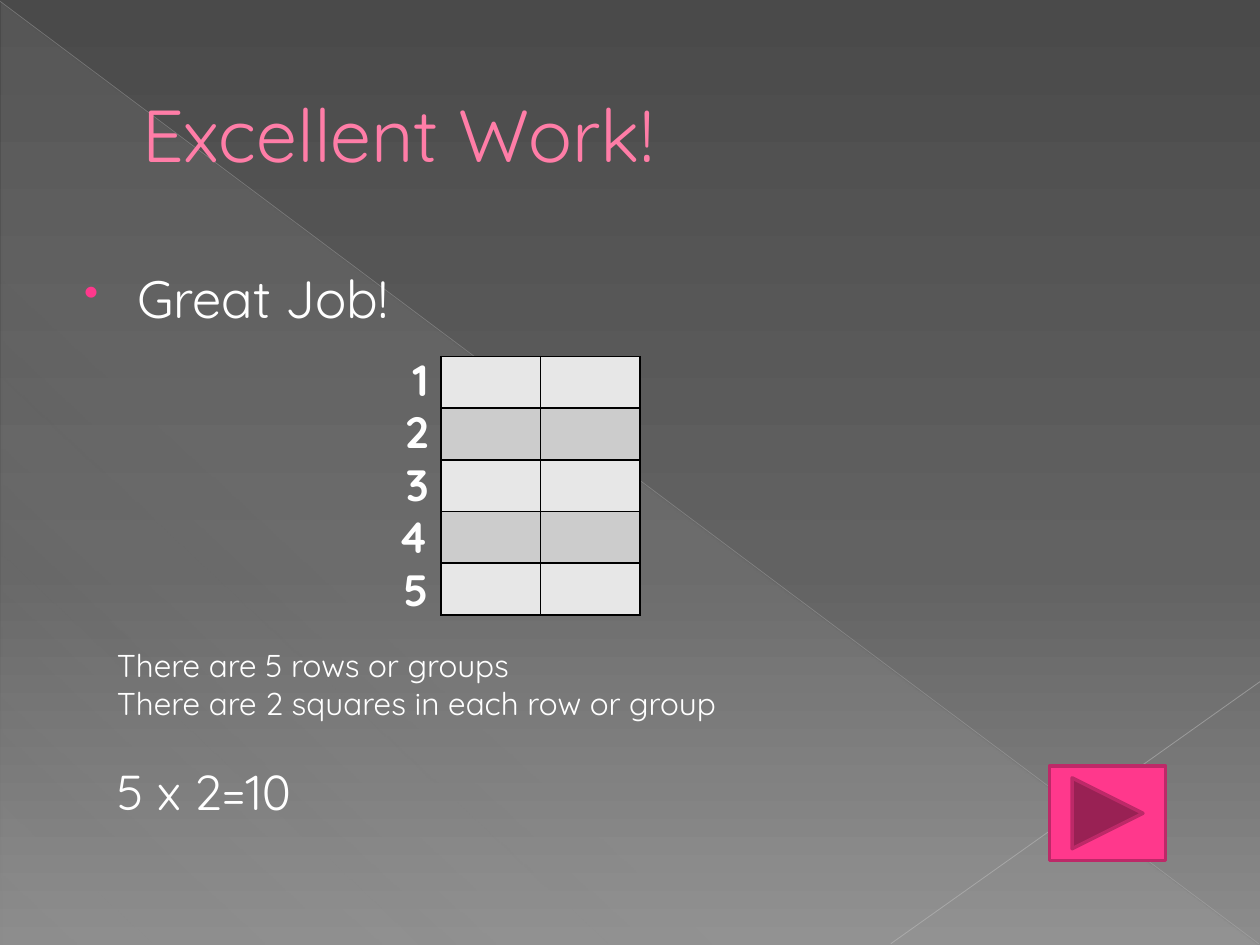
from lxml.etree import SubElement
from pptx import Presentation
from pptx.dml.color import RGBColor
from pptx.enum.shapes import MSO_CONNECTOR, MSO_SHAPE
from pptx.enum.text import MSO_ANCHOR, PP_ALIGN
from pptx.oxml.ns import qn
from pptx.util import Inches, Pt

# Content
TITLE = "Excellent Work!"
PRAISE = "Great Job!"
ROWS, COLUMNS = 5, 2
EXPLANATION = [  # text, size, space before
    ("There are 5 rows or groups", 18, 0),
    ("There are 2 squares in each row or group", 18, 0),
    ("5 x 2=10", 28, 22.5),
]

# Style
FONT = "Quicksand"
WHITE = RGBColor(0xFF, 0xFF, 0xFF)
BLACK = RGBColor(0x00, 0x00, 0x00)
PINK = RGBColor(0xFF, 0x38, 0x8C)
LIGHT_PINK = RGBColor(0xFF, 0x7D, 0xA7)
DARK_PINK = RGBColor(0xBD, 0x29, 0x68)
TITLE_EDGE = RGBColor(0xB1, 0x27, 0x61)
HAZE = RGBColor(0xD2, 0xD2, 0xD2)
BANDS = [RGBColor(0xE7, 0xE7, 0xE7), RGBColor(0xCC, 0xCC, 0xCC)]
BACKDROP = [  # position %, colour, opacity %
    (0, RGBColor(0x4A, 0x4A, 0x4A), 100),
    (60, RGBColor(0x62, 0x62, 0x62), 100),
    (100, RGBColor(0x8C, 0x8C, 0x8C), 100),
]
HAZE_STOPS = [(0, HAZE, 10), (70, HAZE, 8), (100, HAZE, 1)]
DIAGONALS = [  # x1, y1, x2, y2, colour, width, opacity %
    (0, 0.01, 9.99, 7.49, RGBColor(0xBF, 0xBF, 0xBF), 0.39, 35),
    (10, 5.41, 7.07, 7.49, RGBColor(0xC6, 0xC6, 0xC6), 0.47, 45),
]


def add_tag(parent, tag, **attributes):
    return SubElement(parent, qn(tag), {k: str(v) for k, v in attributes.items()})


def add_color(parent, color, opacity=100):
    node = add_tag(parent, "a:srgbClr", val=color)
    if opacity < 100:
        add_tag(node, "a:alpha", val=opacity * 1000)


def set_gradient(fill, owner, stops, angle):
    fill.gradient()
    gradient = next(owner.iter(qn("a:gradFill")))
    for child in list(gradient):
        gradient.remove(child)
    stop_list = add_tag(gradient, "a:gsLst")
    for position, color, opacity in stops:
        add_color(add_tag(stop_list, "a:gs", pos=position * 1000), color, opacity)
    add_tag(gradient, "a:lin", ang=angle * 60000, scaled=0)


def add_text(box, lines, color=WHITE, bold=False, align=PP_ALIGN.LEFT,
             anchor=MSO_ANCHOR.TOP):
    frame = slide.shapes.add_textbox(*map(Inches, box)).text_frame
    frame.word_wrap = True
    frame.vertical_anchor = anchor
    for i, (text, size, before) in enumerate(lines):
        paragraph = frame.add_paragraph() if i else frame.paragraphs[0]
        paragraph.alignment = align
        if before:
            paragraph.space_before = Pt(before)
        run = paragraph.add_run()
        run.text = text
        run.font.name, run.font.size, run.font.bold = FONT, Pt(size), bold
        run.font.color.rgb = color
    return frame.paragraphs[0]


def set_indent(paragraph, margin, first_line):
    properties = paragraph._p.get_or_add_pPr()
    properties.set("marL", str(Inches(margin)))
    properties.set("indent", str(Inches(first_line)))
    return properties


prs = Presentation()
prs.slide_width, prs.slide_height = Inches(10), Inches(7.5)
slide = prs.slides.add_slide(prs.slide_layouts[6])

# Backdrop
set_gradient(slide.background.fill, slide._element, BACKDROP, 90)
haze = slide.shapes.add_shape(MSO_SHAPE.RIGHT_TRIANGLE, Inches(0.01), Inches(0.02),
                              Inches(9.98), Inches(7.48))
haze.shadow.inherit = False
haze.line.fill.background()
set_gradient(haze.fill, haze._element, HAZE_STOPS, 133)
for *ends, color, width, opacity in DIAGONALS:
    diagonal = slide.shapes.add_connector(MSO_CONNECTOR.STRAIGHT, *map(Inches, ends))
    diagonal.line.width = Pt(width)
    diagonal.line.color.rgb = color
    add_tag(next(diagonal._element.iter(qn("a:srgbClr"))), "a:alpha", val=opacity * 1000)
    add_tag(diagonal._element.spPr, "a:effectLst")

# Title with a thin letter edge
title = add_text((0.5, 0.29, 9, 1.53), [(TITLE, 42, 0)], LIGHT_PINK,
                 anchor=MSO_ANCHOR.MIDDLE)
set_indent(title, 0.53, 0)
title_style = title.runs[0]._r.get_or_add_rPr()
edge = add_tag(title_style, "a:ln", w=Pt(0.5))
add_color(add_tag(edge, "a:solidFill"), TITLE_EDGE)
title_style.insert(0, edge)

# Bulleted praise
praise = add_text((0.5, 2.06, 9, 0.65), [(PRAISE, 30, 0)])
bullet = set_indent(praise, 0.49, -0.42)
add_color(add_tag(bullet, "a:buClr"), PINK)
add_tag(bullet, "a:buSzPct", val=80000)
add_tag(bullet, "a:buChar", char="•")

# Forward button
forward = slide.shapes.add_shape(MSO_SHAPE.ACTION_BUTTON_FORWARD_OR_NEXT, Inches(8.33),
                                 Inches(6.08), Inches(0.92), Inches(0.75))
forward.shadow.inherit = False
forward.fill.solid()
forward.fill.fore_color.rgb = PINK
forward.line.color.rgb = DARK_PINK
forward.line.width = Pt(2)

# Array of squares
SQUARE_W, SQUARE_H = 0.79, 0.41
squares = slide.shapes.add_table(ROWS, COLUMNS, Inches(3.5), Inches(2.83),
                                 Inches(COLUMNS * SQUARE_W),
                                 Inches(ROWS * SQUARE_H)).table
for column in squares.columns:
    column.width = Inches(SQUARE_W)
for r, row in enumerate(squares.rows):
    row.height = Inches(SQUARE_H)
    for cell in row.cells:
        cell.margin_top = cell.margin_bottom = 0
        for side in ("a:lnL", "a:lnR", "a:lnT", "a:lnB"):
            border = add_tag(cell._tc.get_or_add_tcPr(), side, w=Pt(1))
            add_color(add_tag(border, "a:solidFill"), BLACK)
        cell.fill.solid()
        cell.fill.fore_color.rgb = BANDS[r % 2]

# Row numbers and explanation
add_text((2.08, 2.75, 1.42, 2.2), [(str(n + 1), 25, 0) for n in range(ROWS)],
         bold=True, align=PP_ALIGN.RIGHT)
add_text((0.83, 5.08, 7.33, 1.48), EXPLANATION)

prs.save("out.pptx")
